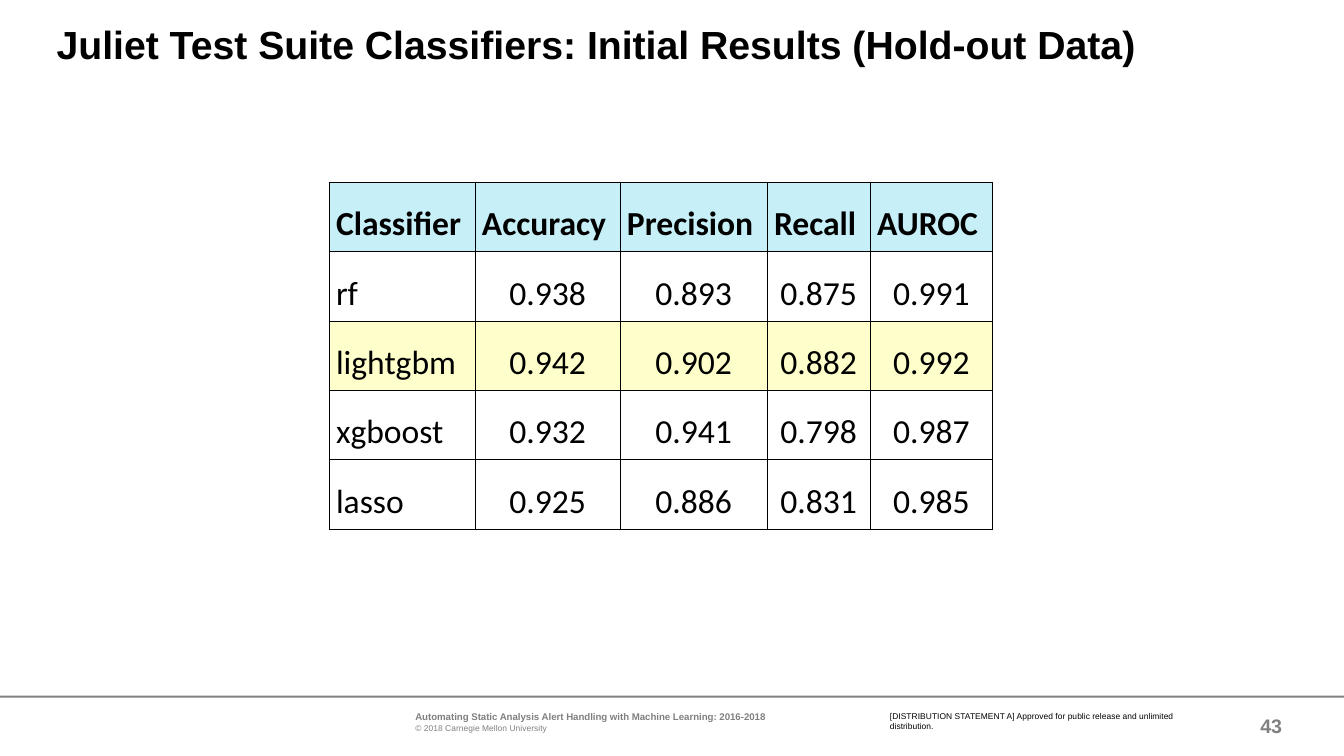
from dataclasses import dataclass

from lxml.etree import SubElement
from pptx import Presentation
from pptx.dml.color import RGBColor
from pptx.enum.shapes import MSO_SHAPE
from pptx.enum.text import MSO_ANCHOR, PP_ALIGN
from pptx.oxml.ns import qn
from pptx.util import Cm, Pt


@dataclass(frozen=True)
class Theme:
    heading_font: str = "Arial"
    table_font: str = "Calibri"
    ink: str = "000000"
    grey: str = "808080"
    header_fill: str = "C6EFF7"
    best_fill: str = "FFFFCC"
    title_size: float = 21
    table_size: float = 18
    page_size: float = 10.5
    footer_size: float = 5.2
    small_size: float = 4.5
    border_width: float = 0.5


class SlideBuilder:
    def __init__(self, slide, theme):
        self.slide = slide
        self.theme = theme

    def style(self, paragraph, size, color, bold=False, font=None):
        paragraph.font.name = font or self.theme.heading_font
        paragraph.font.size = Pt(size)
        paragraph.font.bold = bold
        paragraph.font.color.rgb = RGBColor.from_string(color)

    def frame(self, shape, anchor=MSO_ANCHOR.TOP):
        text_frame = shape.text_frame
        text_frame.margin_left = text_frame.margin_right = 0
        text_frame.margin_top = text_frame.margin_bottom = 0
        text_frame.vertical_anchor = anchor
        text_frame.word_wrap = True
        return text_frame

    def title(self, text, left, top, width, height):
        heading = self.slide.shapes.title
        heading.left, heading.top = Cm(left), Cm(top)
        heading.width, heading.height = Cm(width), Cm(height)
        text_frame = self.frame(heading)
        text_frame.text = text
        paragraph = text_frame.paragraphs[0]
        paragraph.alignment = PP_ALIGN.LEFT
        paragraph.line_spacing = 0.9
        self.style(paragraph, self.theme.title_size, self.theme.ink, bold=True)

    def text(self, lines, left, top, width, height,
             align=PP_ALIGN.LEFT, anchor=MSO_ANCHOR.TOP):
        """Each line is (text, size, color, bold)."""
        box = self.slide.shapes.add_textbox(Cm(left), Cm(top), Cm(width), Cm(height))
        text_frame = self.frame(box, anchor)
        text_frame.text = "\n".join(line[0] for line in lines)
        for paragraph, (_, size, color, bold) in zip(text_frame.paragraphs, lines):
            paragraph.alignment = align
            self.style(paragraph, size, color, bold)

    def rule(self, left, top, width, height):
        bar = self.slide.shapes.add_shape(
            MSO_SHAPE.RECTANGLE, Cm(left), Cm(top), Cm(width), Cm(height))
        bar.shadow.inherit = False
        bar.fill.solid()
        bar.fill.fore_color.rgb = RGBColor.from_string(self.theme.grey)
        bar.line.fill.background()

    def border(self, cell):
        properties = cell._tc.get_or_add_tcPr()
        for side in ("a:lnL", "a:lnR", "a:lnT", "a:lnB"):
            line = SubElement(properties, qn(side), w=str(Pt(self.theme.border_width)))
            fill = SubElement(line, qn("a:solidFill"))
            SubElement(fill, qn("a:srgbClr"), val=self.theme.ink)

    def table(self, rows, left, top, widths, row_height, row_fills):
        grid = self.slide.shapes.add_table(
            len(rows), len(widths), Cm(left), Cm(top),
            Cm(sum(widths)), Cm(row_height * len(rows))).table
        grid.first_row = grid.horz_banding = False
        for column, width in zip(grid.columns, widths):
            column.width = Cm(width)
        for r, values in enumerate(rows):
            grid.rows[r].height = Cm(row_height)
            for c, value in enumerate(values):
                cell = grid.cell(r, c)
                cell.margin_left = cell.margin_right = Cm(0.13)
                cell.margin_top = cell.margin_bottom = Cm(0.13)
                cell.vertical_anchor = MSO_ANCHOR.BOTTOM
                self.border(cell)
                if r in row_fills:
                    cell.fill.solid()
                    cell.fill.fore_color.rgb = RGBColor.from_string(row_fills[r])
                else:
                    cell.fill.background()
                cell.text = value
                paragraph = cell.text_frame.paragraphs[0]
                is_score = r > 0 and c > 0
                paragraph.alignment = PP_ALIGN.CENTER if is_score else PP_ALIGN.LEFT
                self.style(paragraph, self.theme.table_size, self.theme.ink,
                           bold=r == 0, font=self.theme.table_font)


def main():
    deck = Presentation()
    deck.slide_width, deck.slide_height = Cm(25.4), Cm(14.29)
    theme = Theme()
    builder = SlideBuilder(deck.slides.add_slide(deck.slide_layouts[5]), theme)

    # Footer
    builder.rule(0, 13.15, 25.4, 0.04)
    builder.text(
        [("Automating Static Analysis Alert Handling with Machine Learning: 2016-2018",
          theme.footer_size, theme.grey, True),
         ("© 2018 Carnegie Mellon University", theme.small_size, theme.grey, False)],
        7.85, 13.44, 8.56, 0.41)
    builder.text(
        [("[DISTRIBUTION STATEMENT A] Approved for public release and unlimited "
          "distribution.", theme.small_size, theme.ink, False)],
        16.82, 13.44, 5.82, 0.38)
    builder.text([("43", theme.page_size, theme.grey, True)],
                 23.11, 13.34, 1.12, 0.76, PP_ALIGN.RIGHT, MSO_ANCHOR.MIDDLE)

    # Title
    builder.title("Juliet Test Suite Classifiers: Initial Results (Hold-out Data)",
                  1.07, 0.48, 22.86, 1.5)

    # Classifier scores, with the best classifier highlighted
    scores = [
        ("Classifier", "Accuracy", "Precision", "Recall", "AUROC"),
        ("rf", "0.938", "0.893", "0.875", "0.991"),
        ("lightgbm", "0.942", "0.902", "0.882", "0.992"),
        ("xgboost", "0.932", "0.941", "0.798", "0.987"),
        ("lasso", "0.925", "0.886", "0.831", "0.985"),
    ]
    builder.table(scores, 6.22, 3.45, (2.76, 2.74, 2.78, 1.95, 2.31), 1.31,
                  {0: theme.header_fill, 2: theme.best_fill})

    deck.save("out.pptx")


if __name__ == "__main__":
    main()
